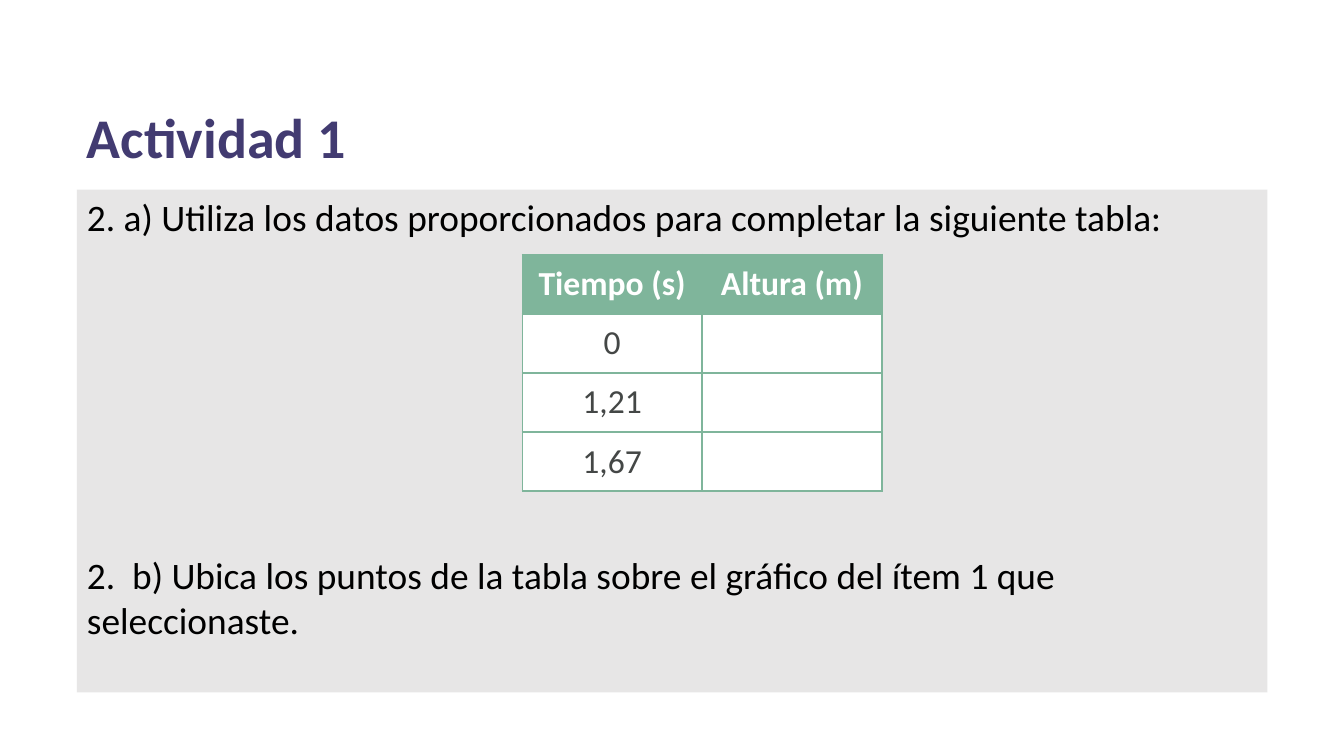
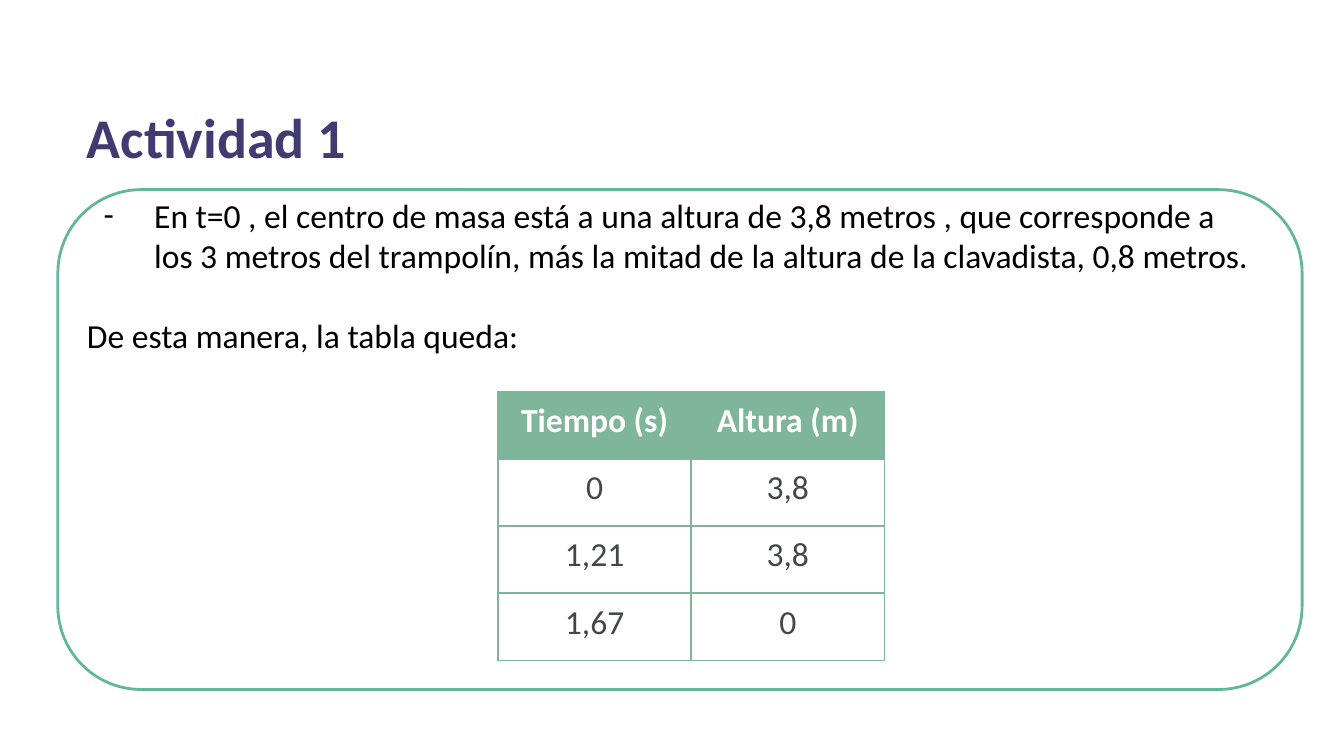
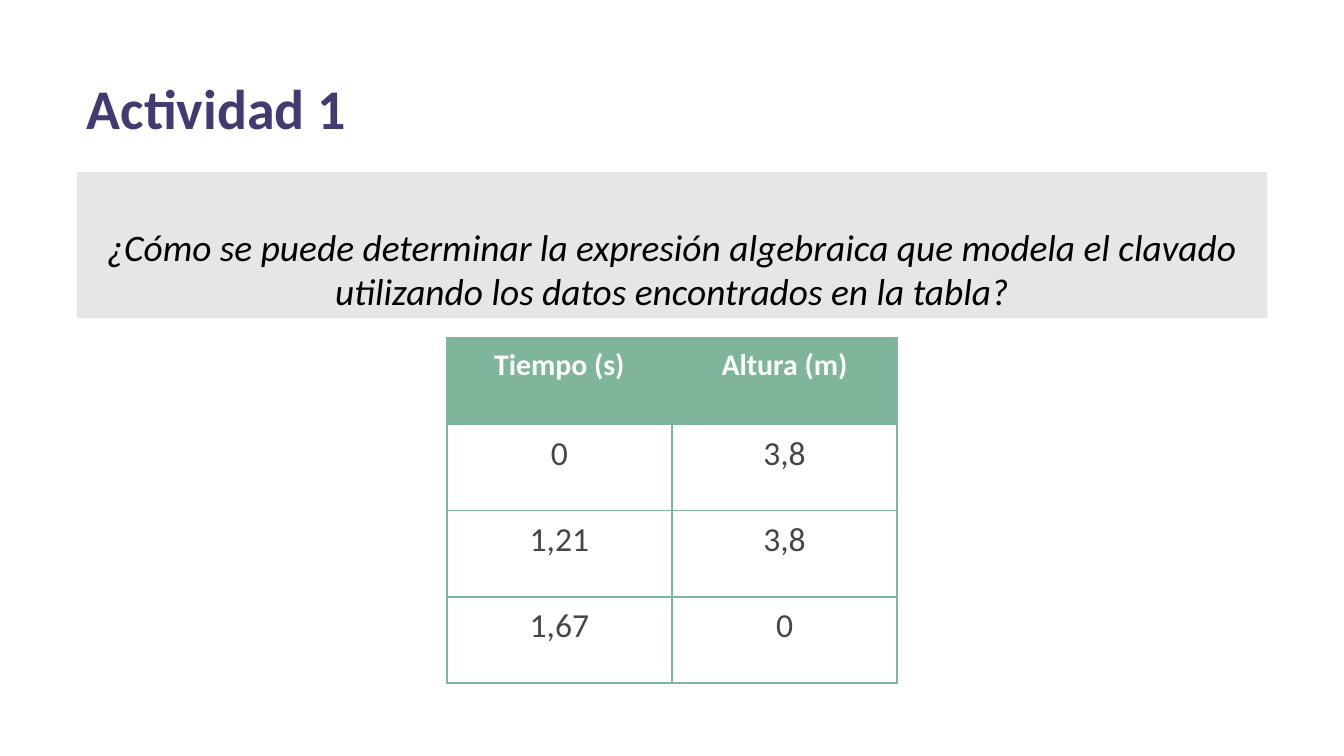
import pptx
import pptx.dml.color
import pptx.enum.shapes
import pptx.enum.text
import pptx.oxml
import pptx.oxml.ns
import pptx.util
from lxml import etree

Pt = pptx.util.Pt
ALIGN = pptx.enum.text.PP_ALIGN
ANCHOR = pptx.enum.text.MSO_ANCHOR
SHAPE = pptx.enum.shapes.MSO_SHAPE

FONT = "Calibri"
BLACK = "000000"
WHITE = "FFFFFF"
PURPLE = "423B71"
GRAY = "E7E6E6"
GREEN = "7FB59B"
EDGE = "62B799"
DARK = "444746"

LEFT = 41.2
WIDTH = 637.8
HEADS = ("Tiempo (s)", "Altura (m)")
TIMES = ("0", "1,21", "1,67")
HEIGHTS = ("3,8", "3,8", "0")
BLANKS = ("", "", "")


def color(code):
    return pptx.dml.color.RGBColor.from_string(code)


def write(frame, text, size=18, shade=BLACK, bold=False, italic=False,
          align=ALIGN.LEFT, before=0, bullet=None):
    para = frame.paragraphs[0]
    if para.runs:
        para = frame.add_paragraph()
    para.alignment = align
    if before:
        para.space_before = Pt(before)
    if bullet:
        props = para._p.get_or_add_pPr()
        props.set("marL", str(Pt(36)))
        props.set("indent", str(Pt(-27)))
        tint = etree.SubElement(props, pptx.oxml.ns.qn("a:buClr"))
        etree.SubElement(tint, pptx.oxml.ns.qn("a:srgbClr"), val=shade)
        etree.SubElement(props, pptx.oxml.ns.qn("a:buFont"), typeface=FONT)
        etree.SubElement(props, pptx.oxml.ns.qn("a:buChar"), char=bullet)
    run = para.add_run()
    run.text = text
    run.font.name = FONT
    run.font.size = Pt(size)
    run.font.bold = bold
    run.font.italic = italic
    run.font.color.rgb = color(shade)


def set_frame(shape, anchor=ANCHOR.TOP):
    frame = shape.text_frame
    frame.word_wrap = True
    frame.vertical_anchor = anchor
    frame.margin_left = frame.margin_right = Pt(5.4)
    frame.margin_top = frame.margin_bottom = Pt(2.7)
    return frame


def add_text(slide, left, top, width, height):
    box = slide.shapes.add_textbox(Pt(left), Pt(top), Pt(width), Pt(height))
    return set_frame(box)


def add_title(slide, top=52.5):
    frame = add_text(slide, LEFT, top, 482.4, 42)
    write(frame, "Actividad 1", size=30, shade=PURPLE, bold=True)


def add_panel(slide, top, height, anchor=ANCHOR.TOP):
    panel = slide.shapes.add_shape(
        SHAPE.RECTANGLE, Pt(LEFT), Pt(top), Pt(WIDTH), Pt(height))
    panel.shadow.inherit = False
    panel.fill.solid()
    panel.fill.fore_color.rgb = color(GRAY)
    panel.line.fill.background()
    return set_frame(panel, anchor)


def add_frame(slide, left, top, width, height):
    ring = slide.shapes.add_shape(
        SHAPE.ROUNDED_RECTANGLE, Pt(left), Pt(top), Pt(width), Pt(height))
    ring.shadow.inherit = False
    ring.adjustments[0] = 0.167
    ring.fill.background()
    ring.line.color.rgb = color(EDGE)
    ring.line.width = Pt(1.5)


def add_borders(cell):
    props = cell._tc.get_or_add_tcPr()
    for side in ("lnL", "lnR", "lnT", "lnB"):
        line = etree.SubElement(
            props, pptx.oxml.ns.qn("a:" + side), w=str(Pt(1)))
        fill = etree.SubElement(line, pptx.oxml.ns.qn("a:solidFill"))
        etree.SubElement(fill, pptx.oxml.ns.qn("a:srgbClr"), val=GREEN)


def add_grid(slide, left, top, width, height, values, head=18):
    rows = [HEADS, *zip(TIMES, values)]
    table = slide.shapes.add_table(
        len(rows), len(HEADS), Pt(left), Pt(top), Pt(width), Pt(height)).table
    table.horz_banding = False
    for column in table.columns:
        column.width = Pt(width / len(HEADS))
    for r, row in enumerate(rows):
        table.rows[r].height = Pt(height / len(rows))
        for c, text in enumerate(row):
            cell = table.cell(r, c)
            add_borders(cell)
            cell.fill.solid()
            cell.fill.fore_color.rgb = color(WHITE if r else GREEN)
            cell.margin_left = cell.margin_right = Pt(4.8)
            cell.margin_top = cell.margin_bottom = Pt(4.8)
            if text:
                write(cell.text_frame, text, size=18 if r else head,
                      shade=DARK if r else WHITE, bold=r == 0,
                      align=ALIGN.CENTER)


def draw_task(slide):
    add_title(slide)
    frame = add_panel(slide, 101.6, 269.4)
    write(frame, "2. a) Utiliza los datos proporcionados para completar "
          "la siguiente tabla:", size=20)
    write(frame, "2.  b) Ubica los puntos de la tabla sobre el gráfico "
          "del ítem 1 que seleccionaste.", size=20, before=167.4)
    add_grid(slide, 279.8, 136.4, 192.6, 126.8, BLANKS)


def draw_answer(slide):
    add_title(slide)
    frame = add_text(slide, LEFT, 101.6, WIDTH, 92.9)
    write(frame, "En t=0 , el centro de masa está a una altura de 3,8 metros , "
          "que corresponde a los 3 metros del trampolín, más la mitad de la "
          "altura de la clavadista, 0,8 metros.", bullet="-")
    write(frame, "De esta manera, la tabla queda:", before=21)
    add_grid(slide, 266.8, 209.8, 207, 144, HEIGHTS)
    add_frame(slide, 31, 101.6, 666.6, 267.8)


def draw_query(slide):
    add_title(slide, 36.8)
    frame = add_panel(slide, 92.2, 78.4, ANCHOR.BOTTOM)
    write(frame, "¿Cómo se puede determinar la expresión algebraica que modela "
          "el clavado utilizando los datos encontrados en la tabla?",
          size=20, italic=True, align=ALIGN.CENTER)
    add_grid(slide, 239.4, 181, 241.2, 185, HEIGHTS, head=16)


def main():
    deck = pptx.Presentation()
    deck.slide_width = Pt(720)
    deck.slide_height = Pt(405)
    for draw in (draw_task, draw_answer, draw_query):
        draw(deck.slides.add_slide(deck.slide_layouts[6]))
    deck.save("out.pptx")


if __name__ == "__main__":
    main()
